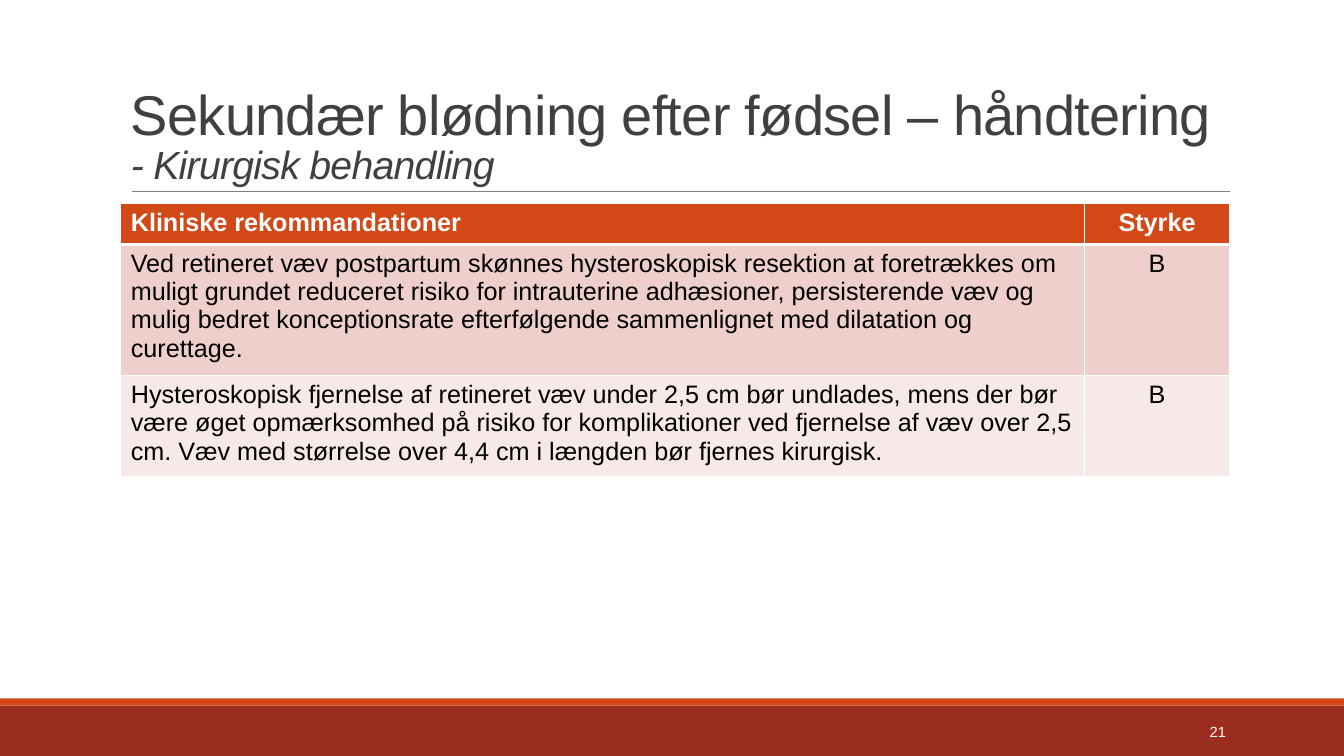
from dataclasses import dataclass

from lxml import etree
from pptx import Presentation
from pptx import util as u
from pptx.dml.color import RGBColor
from pptx.enum import shapes, text
from pptx.oxml.ns import qn

PX = 9525  # EMU per px, 96 px to the inch


@dataclass(frozen=True)
class Theme:
    font: str = "Arial"
    white: str = "FFFFFF"
    black: str = "000000"
    title: str = "404040"
    rule: str = "808080"
    accent: str = "D34817"
    footer: str = "9B2D1F"
    bands: tuple = ("EFCFCC", "F7E9E8")
    title_size: float = 40
    subtitle_size: float = 28
    table_size: float = 18
    number_size: float = 10.5


THEME = Theme()
LEFT, CENTER, RIGHT = text.PP_ALIGN.LEFT, text.PP_ALIGN.CENTER, text.PP_ALIGN.RIGHT

HEADER = ("Kliniske rekommandationer", "Styrke")
RECOMMENDATIONS = (
    ("Ved retineret væv postpartum skønnes hysteroskopisk resektion at "
     "foretrækkes om muligt grundet reduceret risiko for intrauterine "
     "adhæsioner, persisterende væv og mulig bedret konceptionsrate "
     "efterfølgende sammenlignet med dilatation og curettage.", "B"),
    ("Hysteroskopisk fjernelse af retineret væv under 2,5 cm bør undlades, "
     "mens der bør være øget opmærksomhed på risiko for komplikationer ved "
     "fjernelse af væv over 2,5 cm. Væv med størrelse over 4,4 cm i længden "
     "bør fjernes kirurgisk.", "B"),
)


def px(*lengths):
    return [u.Emu(n * PX) for n in lengths]


def rgb(color):
    return RGBColor.from_string(color)


def add_run(p, words, size, color, bold=False, italic=False):
    r = p.add_run()
    r.text = words
    r.font.name, r.font.size = THEME.font, u.Pt(size)
    r.font.bold, r.font.italic = bold, italic
    r.font.color.rgb = rgb(color)
    return r


def add_bar(slide, box, color):
    sp = slide.shapes.add_shape(shapes.MSO_SHAPE.RECTANGLE, *px(*box))
    sp.shadow.inherit = False
    sp.fill.solid()
    sp.fill.fore_color.rgb = rgb(color)
    sp.line.fill.background()


def add_title(slide, box):
    left, top, width, height = box
    sp = slide.shapes.title
    sp.left, sp.top, sp.width, sp.height = px(*box)
    tf = sp.text_frame
    tf.word_wrap, tf.auto_size = True, text.MSO_AUTO_SIZE.NONE
    tf.vertical_anchor = text.MSO_ANCHOR.BOTTOM
    p = tf.paragraphs[0]
    p.alignment, p.line_spacing = LEFT, 0.85
    heading = add_run(p, "Sekundær blødning efter fødsel – håndtering",
                      THEME.title_size, THEME.title)
    p.add_line_break()
    etree.SubElement(p._p[-1], qn("a:rPr"), sz=str(THEME.title_size * 100))
    subtitle = add_run(p, "- Kirurgisk behandling",
                       THEME.subtitle_size, THEME.title, italic=True)
    for r in (heading, subtitle):
        r.font._element.set("spc", "-50")

    # Rule under the title
    y = top + height - 1
    rule = slide.shapes.add_connector(
        shapes.MSO_CONNECTOR.STRAIGHT, *px(left + 11, y, left + width, y))
    rule.line.color.rgb = rgb(THEME.rule)
    rule.line.width = u.Pt(0.5)
    etree.SubElement(rule._element.spPr, qn("a:effectLst"))


def set_borders(cell, bottom):
    tc_pr = cell._tc.get_or_add_tcPr()
    sides = (("a:lnL", 1), ("a:lnR", 1), ("a:lnT", 1), ("a:lnB", bottom))
    for place, (side, points) in enumerate(sides):
        ln = etree.Element(qn(side), w=str(u.Pt(points)))
        fill = etree.SubElement(ln, qn("a:solidFill"))
        etree.SubElement(fill, qn("a:srgbClr"), val=THEME.white)
        tc_pr.insert(place, ln)


def add_recommendations(slide, box, columns, heights):
    rows = (HEADER, *RECOMMENDATIONS)
    table = slide.shapes.add_table(len(rows), len(columns), *px(*box)).table
    for column, width in zip(table.columns, px(*columns)):
        column.width = width
    for row, height in zip(table.rows, px(*heights)):
        row.height = height
    for i, row in enumerate(rows):
        head = i == 0
        for j, words in enumerate(row):
            cell = table.cell(i, j)
            cell.fill.solid()
            cell.fill.fore_color.rgb = rgb(THEME.accent if head else THEME.bands[i - 1])
            set_borders(cell, bottom=3 if head else 1)
            p = cell.text_frame.paragraphs[0]
            p.alignment = CENTER if j else LEFT
            add_run(p, words, THEME.table_size,
                    THEME.white if head else THEME.black, bold=head)


def add_footer(slide, box):
    left, top, width, height = box
    add_bar(slide, box, THEME.footer)
    add_bar(slide, (left, top - 7, width, 7), THEME.accent)

    # Page number
    sp = slide.shapes.add_textbox(*px(left + width - 240, top + 6, 137, 38))
    tf = sp.text_frame
    tf.word_wrap = True
    tf.vertical_anchor = text.MSO_ANCHOR.MIDDLE
    p = tf.paragraphs[0]
    p.alignment = RIGHT
    add_run(p, "21", THEME.number_size, THEME.white)


def main():
    prs = Presentation()
    prs.slide_width, prs.slide_height = px(1280, 720)
    slide = prs.slides.add_slide(prs.slide_layouts.get_by_name("Title Only"))
    add_footer(slide, (0, 672, 1280, 48))
    add_title(slide, (115, 30, 1056, 153))
    add_recommendations(slide, (115, 194, 1056, 247), (918, 138), (39, 117, 91))
    prs.save("out.pptx")


if __name__ == "__main__":
    main()
